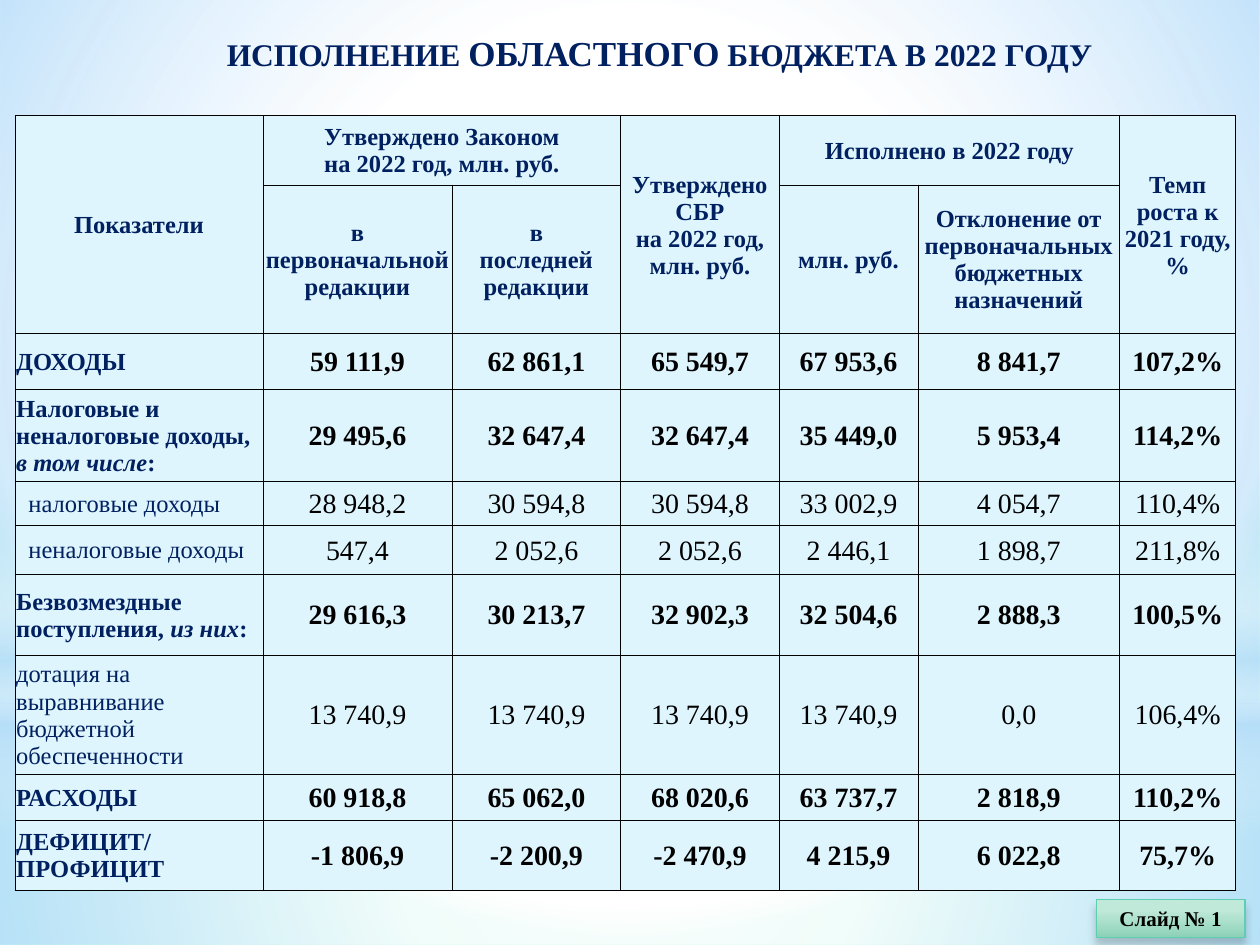
from lxml.etree import SubElement
from pptx import Presentation
from pptx.dml.color import RGBColor
from pptx.enum.shapes import MSO_SHAPE
from pptx.enum.text import MSO_ANCHOR, PP_ALIGN
from pptx.oxml.ns import qn
from pptx.util import Pt

COLORS = {
    "navy": "002060", "black": "000000", "white": "FFFFFF", "sky": "B4DCFA",
    "mint": "C4F8EC", "cell": "DFF5FD", "badge line": "5DCEAF",
    "badge light": "C0E9DA", "badge mid": "9EDAC4", "badge dark": "8CD1B8",
}
CENTER = (50, 50, 50, 50)

COLUMN_WIDTHS = [141.7, 108, 96.5, 90.5, 79.3, 115.3, 66.3]
ROW_HEIGHTS = [39.6, 85, 31.7, 52.6, 25.2, 28.1, 46.1, 67.5, 26.6, 39.6]

# (row, column, last row, last column, paragraphs)
HEADINGS = [
    (0, 0, 1, 0, ["Показатели"]),
    (0, 1, 0, 2, ["Утверждено Законом", "на 2022 год, млн. руб."]),
    (0, 3, 1, 3, ["Утверждено СБР", "на 2022 год, млн. руб."]),
    (0, 4, 0, 5, ["Исполнено в 2022 году"]),
    (0, 6, 1, 6, ["Темп роста к 2021 году, %"]),
    (1, 1, 1, 1, ["в", "первоначальной редакции"]),
    (1, 2, 1, 2, ["в", "последней редакции"]),
    (1, 4, 1, 4, ["млн. руб."]),
    (1, 5, 1, 5, ["Отклонение от первоначальных бюджетных назначений"]),
]

# (label paragraphs, bold, indent, values); asterisks enclose italics
INDICATORS = [
    (["ДОХОДЫ"], True, 0,
     ["59 111,9", "62 861,1", "65 549,7", "67 953,6", "8 841,7", "107,2%"]),
    (["Налоговые и неналоговые доходы, *в том числе*:"], True, 0,
     ["29 495,6", "32 647,4", "32 647,4", "35 449,0", "5 953,4", "114,2%"]),
    (["налоговые доходы"], False, 7,
     ["28 948,2", "30 594,8", "30 594,8", "33 002,9", "4 054,7", "110,4%"]),
    (["неналоговые доходы"], False, 7,
     ["547,4", "2 052,6", "2 052,6", "2 446,1", "1 898,7", "211,8%"]),
    (["Безвозмездные поступления, *из них*:"], True, 0,
     ["29 616,3", "30 213,7", "32 902,3", "32 504,6", "2 888,3", "100,5%"]),
    (["дотация на выравнивание бюджетной обеспеченности"], False, 0,
     ["13 740,9", "13 740,9", "13 740,9", "13 740,9", "0,0", "106,4%"]),
    (["РАСХОДЫ"], True, 0,
     ["60 918,8", "65 062,0", "68 020,6", "63 737,7", "2 818,9", "110,2%"]),
    (["ДЕФИЦИТ/", "ПРОФИЦИТ"], True, 0,
     ["-1 806,9", "-2 200,9", "-2 470,9", "4 215,9", "6 022,8", "75,7%"]),
]


def rgb(color):
    return RGBColor.from_string(COLORS[color])


def add_color(parent, color, opacity=100):
    tone = SubElement(parent, qn("a:srgbClr"), val=COLORS[color])
    if opacity < 100:
        SubElement(tone, qn("a:alpha"), val=str(opacity * 1000))


class BudgetSlide:
    font_name = "Times New Roman"

    def __init__(self, presentation):
        self.slide = presentation.slides.add_slide(presentation.slide_layouts[6])

    def gradient(self, fill, element, stops, focus=None, angle=0):
        """Stops are (position, color, opacity); a focus rectangle makes it radial."""
        fill.gradient()
        grad = element.find(".//" + qn("a:gradFill"))
        for child in list(grad):
            grad.remove(child)
        stop_list = SubElement(grad, qn("a:gsLst"))
        for position, color, opacity in stops:
            stop = SubElement(stop_list, qn("a:gs"), pos=str(position * 1000))
            add_color(stop, color, opacity)
        if focus:
            radial = SubElement(grad, qn("a:path"), {"path": "circle"})
            sides = {side: str(share * 1000) for side, share in zip("ltrb", focus)}
            SubElement(radial, qn("a:fillToRect"), sides)
        else:
            SubElement(grad, qn("a:lin"), ang=str(angle * 60000), scaled="0")

    def background(self, stops, focus):
        self.gradient(self.slide.background.fill, self.slide.element, stops, focus)

    def glow(self, kind, top, height, stops, focus=None, angle=0):
        shape = self.slide.shapes.add_shape(kind, 0, Pt(top), Pt(720), Pt(height))
        shape.shadow.inherit = False
        shape.line.fill.background()
        self.gradient(shape.fill, shape.element, stops, focus, angle)

    def fill_text(self, frame, paragraphs, size, color="navy", bold=True,
                  align=PP_ALIGN.CENTER, indent=0, accent_size=None):
        """Parts between asterisks get the accent size, or else italics."""
        frame.word_wrap = True
        for number, text in enumerate(paragraphs):
            paragraph = frame.add_paragraph() if number else frame.paragraphs[0]
            paragraph.alignment = align
            if indent:
                paragraph._p.get_or_add_pPr().set("marL", str(Pt(indent)))
            font = paragraph.font
            font.name, font.size, font.bold = self.font_name, Pt(size), bold
            font.color.rgb = rgb(color)
            for part, words in enumerate(text.split("*")):
                run = paragraph.add_run()
                run.text = words
                if part % 2 and accent_size:
                    run.font.size = Pt(accent_size)
                elif part % 2:
                    run.font.italic = True

    def title(self, text, left, top, width, height):
        box = self.slide.shapes.add_textbox(Pt(left), Pt(top), Pt(width), Pt(height))
        self.fill_text(box.text_frame, [text], 18, accent_size=20)

    def badge(self, text, left, top, width, height):
        shape = self.slide.shapes.add_shape(
            MSO_SHAPE.RECTANGLE, Pt(left), Pt(top), Pt(width), Pt(height))
        self.gradient(shape.fill, shape.element, [
            (28, "badge light", 100), (75, "badge mid", 100), (100, "badge dark", 100)],
            angle=90)
        shape.line.color.rgb = rgb("badge line")
        shape.line.width = Pt(0.75)
        shape.shadow.inherit = False
        effects = shape.element.spPr.find(qn("a:effectLst"))
        shadow = SubElement(effects, qn("a:outerShdw"), blurRad=str(Pt(5)),
                            dist=str(Pt(4)), dir=str(90 * 60000))
        add_color(shadow, "black", 20)
        self.fill_text(shape.text_frame, [text], 12, "black")

    def style_cell(self, cell):
        cell.vertical_anchor = MSO_ANCHOR.MIDDLE
        cell.margin_left = cell.margin_right = cell.margin_top = Pt(0.7)
        cell.margin_bottom = 0
        properties = cell._tc.get_or_add_tcPr()
        for side in "LRTB":
            border = SubElement(properties, qn(f"a:ln{side}"), w=str(Pt(0.5)))
            add_color(SubElement(border, qn("a:solidFill")), "black")
        cell.fill.solid()
        cell.fill.fore_color.rgb = rgb("cell")

    def table(self, left, top):
        table = self.slide.shapes.add_table(
            len(ROW_HEIGHTS), len(COLUMN_WIDTHS), Pt(left), Pt(top),
            Pt(sum(COLUMN_WIDTHS)), Pt(sum(ROW_HEIGHTS))).table
        table.first_row = table.horz_banding = False
        for column, width in zip(table.columns, COLUMN_WIDTHS):
            column.width = Pt(width)
        for row, height in zip(table.rows, ROW_HEIGHTS):
            row.height = Pt(height)
        for cell in table.iter_cells():
            self.style_cell(cell)
        for row, column, last_row, last_column, paragraphs in HEADINGS:
            cell = table.cell(row, column)
            if (row, column) != (last_row, last_column):
                cell.merge(table.cell(last_row, last_column))
            self.fill_text(cell.text_frame, paragraphs, 14)
        for row, (label, bold, indent, values) in enumerate(INDICATORS, start=2):
            self.fill_text(table.cell(row, 0).text_frame, label, 14, bold=bold,
                           align=PP_ALIGN.LEFT, indent=indent)
            for column, value in enumerate(values, start=1):
                self.fill_text(table.cell(row, column).text_frame, [value], 16,
                               "black", bold)


def main():
    presentation = Presentation()
    presentation.slide_width, presentation.slide_height = Pt(720), Pt(540)
    budget = BudgetSlide(presentation)
    budget.background([(85, "white", 100), (89, "mint", 100)], (20, 10, 20, 60))
    budget.glow(MSO_SHAPE.RECTANGLE, 401.8, 138.2,
                [(0, "white", 91), (37, "white", 76), (100, "sky", 79)], CENTER)
    budget.glow(MSO_SHAPE.RECTANGLE, 0, 401.8,
                [(0, "white", 89), (48, "white", 62), (100, "sky", 79)], CENTER)
    budget.glow(MSO_SHAPE.RECTANGLE, 296.6, 180,
                [(0, "white", 0), (29, "white", 30), (45, "sky", 40),
                 (55, "white", 26), (65, "sky", 60), (100, "white", 0)], angle=90)
    budget.glow(MSO_SHAPE.OVAL, 126, 401.8,
                [(0, "white", 100), (56, "white", 0)], CENTER)
    budget.title("ИСПОЛНЕНИЕ *ОБЛАСТНОГО* БЮДЖЕТА В 2022 ГОДУ", 121.7, 14.4, 510.5, 31.7)
    budget.table(8.6, 66.2)
    budget.badge("Слайд № 1", 626.4, 514.1, 85, 21.6)
    presentation.save("out.pptx")


if __name__ == "__main__":
    main()
